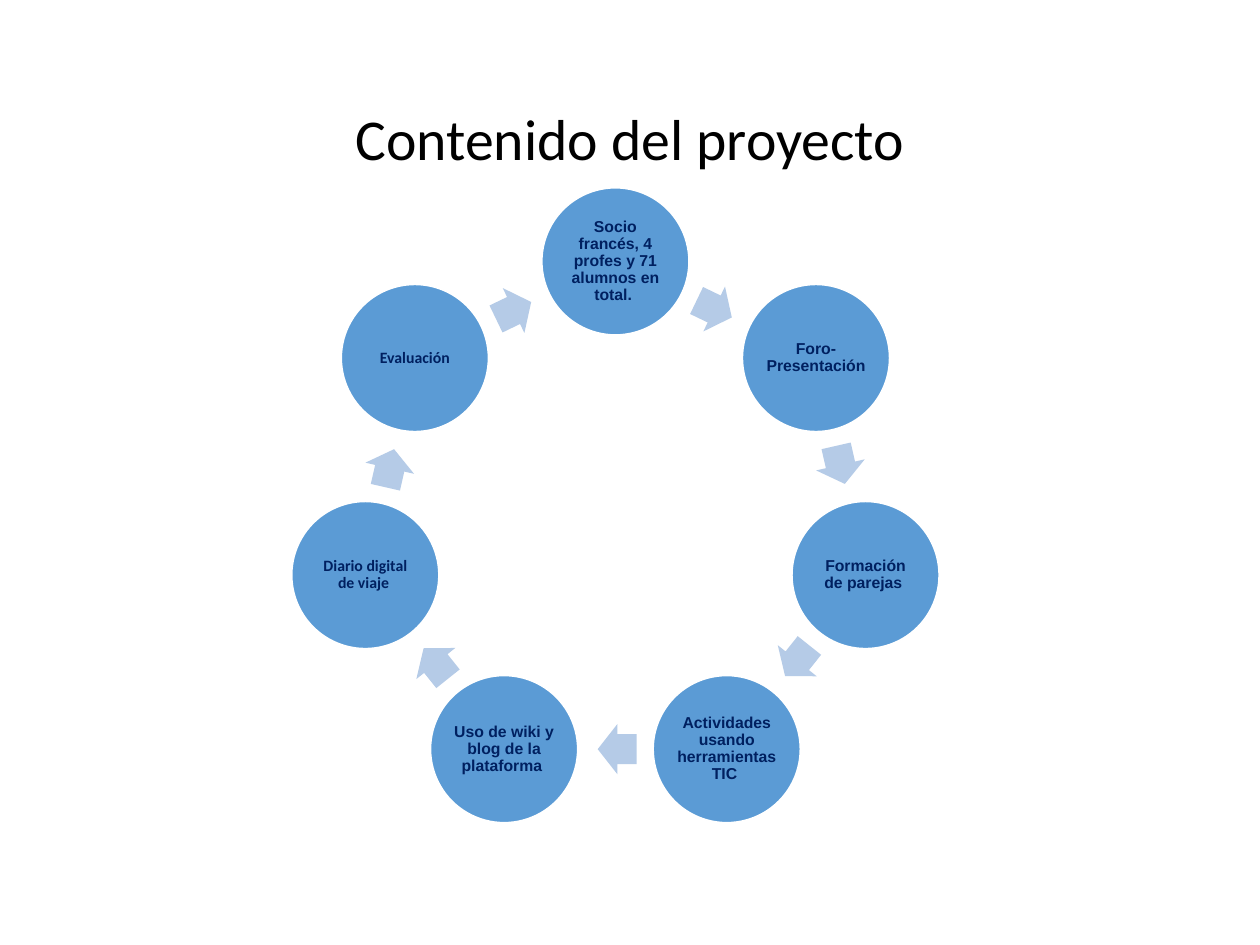
import math

import pptx
import pptx.dml.color
import pptx.enum.shapes
import pptx.enum.text
import pptx.util

Pt = pptx.util.Pt
RGBColor = pptx.dml.color.RGBColor
MSO_SHAPE = pptx.enum.shapes.MSO_SHAPE

BLACK = RGBColor(0x00, 0x00, 0x00)
WHITE = RGBColor(0xFF, 0xFF, 0xFF)
NAVY = RGBColor(0x00, 0x20, 0x60)
BLUE = RGBColor(0x5B, 0x9B, 0xD5)
PALE_BLUE = RGBColor(0xB5, 0xCB, 0xE7)

STEPS = [
    ("Socio francés, 4 profes y 71 alumnos en total. ", "Arial"),
    ("Foro-Presentación", "Arial"),
    ("Formación de parejas ", "Arial"),
    ("Actividades usando herramientas TIC ", "Arial"),
    ("Uso de wiki y blog de la plataforma ", "Arial"),
    ("Diario digital de viaje ", "Calibri"),
    ("Evaluación", "Calibri"),
]
CENTER_X, CENTER_Y, RADIUS = 351.7, 296, 146.6
DIAMETER = 84.2
ARROW_W, ARROW_H, ARROW_SETBACK = 22.3, 28.5, 1


class CycleSlide:
    """Draws a title and a ring of steps on one slide, in one style."""

    frame = {"word_wrap": True, "vertical_anchor": pptx.enum.text.MSO_ANCHOR.MIDDLE}
    paragraph = {"alignment": pptx.enum.text.PP_ALIGN.CENTER, "line_spacing": 0.9}
    title_font = {"name": "Calibri", "size": Pt(33), "bold": False}
    step_font = {"size": Pt(9), "bold": True}
    step_margins = {f"margin_{side}": Pt(0.9) for side in ("left", "top", "right", "bottom")}

    def __init__(self, prs):
        self.s = prs.slides.add_slide(prs.slide_layouts[6])

    def apply(self, target, values):
        for name, value in values.items():
            setattr(target, name, value)

    def label(self, sp, text, font, color, margins):
        tf = sp.text_frame
        self.apply(tf, {**self.frame, **margins})
        p = tf.paragraphs[0]
        self.apply(p, self.paragraph)
        r = p.add_run()
        r.text = text
        self.apply(r.font, font)
        r.font.color.rgb = color

    def title(self, text, x, y, w, h):
        sp = self.s.shapes.add_textbox(Pt(x), Pt(y), Pt(w), Pt(h))
        self.label(sp, text, self.title_font, BLACK, {})

    def shape(self, kind, cx, cy, w, h, color):
        sp = self.s.shapes.add_shape(kind, Pt(cx - w / 2), Pt(cy - h / 2), Pt(w), Pt(h))
        sp.shadow.inherit = False
        sp.fill.solid()
        sp.fill.fore_color.rgb = color
        return sp

    def step(self, text, font_name, cx, cy):
        sp = self.shape(MSO_SHAPE.OVAL, cx, cy, DIAMETER, DIAMETER, BLUE)
        sp.line.color.rgb = WHITE
        sp.line.width = Pt(1)
        self.label(sp, text, {**self.step_font, "name": font_name}, NAVY, self.step_margins)

    def arrow(self, cx, cy, rotation):
        sp = self.shape(MSO_SHAPE.RIGHT_ARROW, cx, cy, ARROW_W, ARROW_H, PALE_BLUE)
        sp.line.fill.background()
        sp.adjustments[0], sp.adjustments[1] = 0.6, 0.5
        sp.rotation = rotation


def on_ring(angle, radius):
    return CENTER_X + radius * math.sin(angle), CENTER_Y - radius * math.cos(angle)


def main():
    prs = pptx.Presentation()
    prs.slide_width, prs.slide_height = Pt(720), Pt(540)
    slide = CycleSlide(prs)
    slide.title("Contenido del proyecto", 49.5, 28.8, 621, 104.4)

    turn = 2 * math.pi / len(STEPS)
    for i, (text, font_name) in enumerate(STEPS):
        slide.step(text, font_name, *on_ring(i * turn, RADIUS))
        middle = (i + 0.5) * turn
        x, y = on_ring(middle, RADIUS * math.cos(turn / 2))
        slide.arrow(x - ARROW_SETBACK * math.cos(middle),
                    y - ARROW_SETBACK * math.sin(middle),
                    math.degrees(middle))

    prs.save("out.pptx")


if __name__ == "__main__":
    main()
